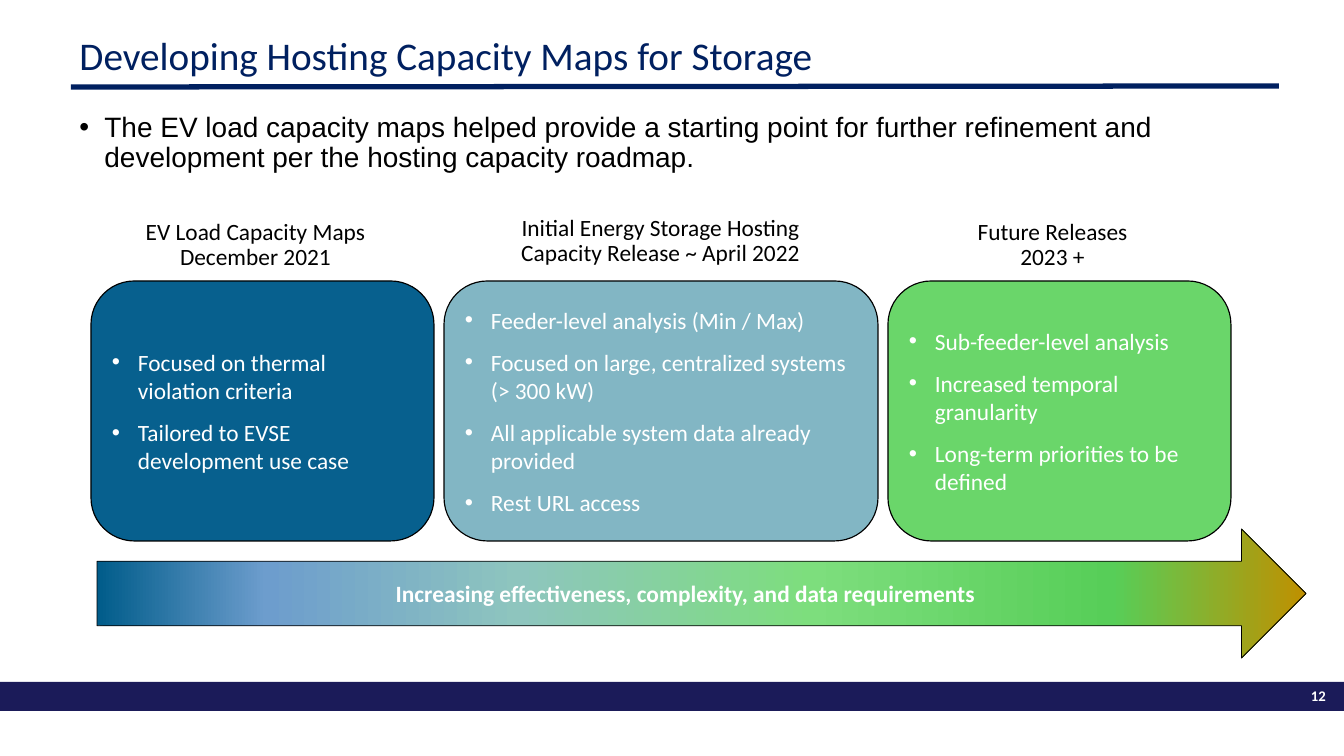
from lxml.etree import SubElement
from pptx import Presentation
from pptx.dml.color import RGBColor
from pptx.enum.shapes import MSO_CONNECTOR, MSO_SHAPE
from pptx.enum.text import MSO_ANCHOR, MSO_AUTO_SIZE, PP_ALIGN
from pptx.oxml.ns import qn
from pptx.util import Emu, Pt

SCALE = 914400 / 84
INK = {
    "navy": "002060", "bar": "1B1B59", "black": "000000", "white": "FFFFFF",
    "blue": "07608E", "teal": "82B6C4", "green": "6AD66A",
}
BLEND = {0: "005C8A", 14: "6D9DCD", 35: "8EC5BE", 59: "7DDE7D", 84: "57CE58", 100: "BF9000"}
HEAD = {"size": Pt(33.6), "name": "Calibri", "bold": False}
LEAD = {"size": Pt(24), "name": "Arial"}
TEXT = {"size": Pt(20), "name": "Calibri"}
BOLD = {**TEXT, "bold": True}
PAGE = {"size": Pt(12.6), "name": "Calibri", "bold": True}
LEFT = {"alignment": PP_ALIGN.LEFT}
TIGHT = {"line_spacing": 0.9, "space_before": Pt(0)}
MID = {"alignment": PP_ALIGN.CENTER}
STAGES = [
    (91, 343, "blue", (97, 216, 317, 69), ["EV Load Capacity Maps December 2021"],
     ["Focused on thermal violation criteria", "Tailored to EVSE development use case"]),
    (444, 434, "teal", (502, 212, 317, 80),
     ["Initial Energy Storage Hosting Capacity Release ~ April 2022"],
     ["Feeder-level analysis (Min / Max)",
      "Focused on large, centralized systems (> 300 kW)",
      "All applicable system data already provided", "Rest URL access"]),
    (888, 343, "green", (924, 216, 257, 71), ["Future Releases", "2023 +"],
     ["Sub-feeder-level analysis", "Increased temporal granularity",
      "Long-term priorities to be defined"]),
]


def px(*nums):
    return [Emu(round(n * SCALE)) for n in nums]


def tint(name):
    return RGBColor.from_string(INK[name])


def apply(item, form):
    for key, val in form.items():
        setattr(item, key, val)


def bullet(para, dent):
    props = para._p.get_or_add_pPr()
    gap = px(dent)[0]
    props.set("marL", str(gap))
    props.set("indent", str(-gap))
    SubElement(props, qn("a:buFont"), typeface="Arial")
    SubElement(props, qn("a:buChar"), char="•")


def write(shape, lines, font, color, form, dent=0, gap=0, anchor=MSO_ANCHOR.TOP):
    frame = shape.text_frame
    apply(frame, {"word_wrap": True, "auto_size": MSO_AUTO_SIZE.NONE,
                  "vertical_anchor": anchor})
    for i, line in enumerate(lines):
        para = frame.add_paragraph() if i else frame.paragraphs[0]
        if dent:
            bullet(para, dent)
        apply(para, form)
        if gap:
            apply(para, {"space_before": Pt(gap if i else 0), "space_after": Pt(gap)})
        run = para.add_run()
        run.text = line
        apply(run.font, font)
        run.font.color.rgb = tint(color)


def block(slide, kind, area, fill=None, line=0):
    shape = slide.shapes.add_shape(kind, *px(*area))
    shape.shadow.inherit = False
    if fill:
        shape.fill.solid()
        shape.fill.fore_color.rgb = tint(fill)
    if line:
        shape.line.color.rgb = tint("black")
        shape.line.width = Pt(line)
    else:
        shape.line.fill.background()
    return shape


def label(slide, area, lines, font, color, form):
    write(slide.shapes.add_textbox(*px(*area)), lines, font, color, form)


def holder(shape, area, *args, **opts):
    apply(shape, dict(zip(("left", "top", "width", "height"), px(*area))))
    write(shape, *args, **opts)


def rule(slide, ends, color, width):
    line = slide.shapes.add_connector(MSO_CONNECTOR.STRAIGHT, *px(*ends))
    line.line.color.rgb = tint(color)
    line.line.width = Pt(width)
    SubElement(line._element.spPr, qn("a:effectLst"))


def blend(shape):
    shape.fill.gradient()
    shape.fill.gradient_angle = 0
    stops = shape._element.spPr.find(qn("a:gradFill")).find(qn("a:gsLst"))
    stops.clear()
    for spot, color in BLEND.items():
        stop = SubElement(stops, qn("a:gs"), pos=str(spot * 1000))
        SubElement(stop, qn("a:srgbClr"), val=color)


def stage(slide, left, width, fill, area, title, points):
    box = block(slide, MSO_SHAPE.ROUNDED_RECTANGLE, (left, 281, width, 260), fill, 1)
    write(box, points, TEXT, "white", LEFT, dent=26, gap=6, anchor=MSO_ANCHOR.MIDDLE)
    label(slide, area, title, TEXT, "black", {**MID, **TIGHT})


def main():
    deck = Presentation()
    deck.slide_width, deck.slide_height = px(1344, 756)
    slide = deck.slides.add_slide(deck.slide_layouts[1])
    block(slide, MSO_SHAPE.RECTANGLE, (0, 682, 1344, 29), "bar")
    label(slide, (1279, 683, 55, 26), ["12"], PAGE, "white", {"alignment": PP_ALIGN.RIGHT})
    rule(slide, (71, 87, 1279, 86), "navy", 4.5)
    holder(slide.shapes.title, (71, 33, 1208, 49),
           ["Developing Hosting Capacity Maps for Storage"],
           HEAD, "navy", {**LEFT, **TIGHT}, anchor=MSO_ANCHOR.MIDDLE)
    holder(slide.placeholders[1], (71, 109, 1193, 80),
           ["The EV load capacity maps helped provide a starting point for further "
            "refinement and development per the hosting capacity roadmap."],
           LEAD, "black", {**LEFT, **TIGHT}, dent=25)
    arrow = block(slide, MSO_SHAPE.RIGHT_ARROW, (97, 529, 1209, 129), line=0.75)
    blend(arrow)
    write(arrow, ["Increasing effectiveness, complexity, and data requirements"],
          BOLD, "white", MID, anchor=MSO_ANCHOR.MIDDLE)
    for item in STAGES:
        stage(slide, *item)
    deck.save("out.pptx")


if __name__ == "__main__":
    main()
